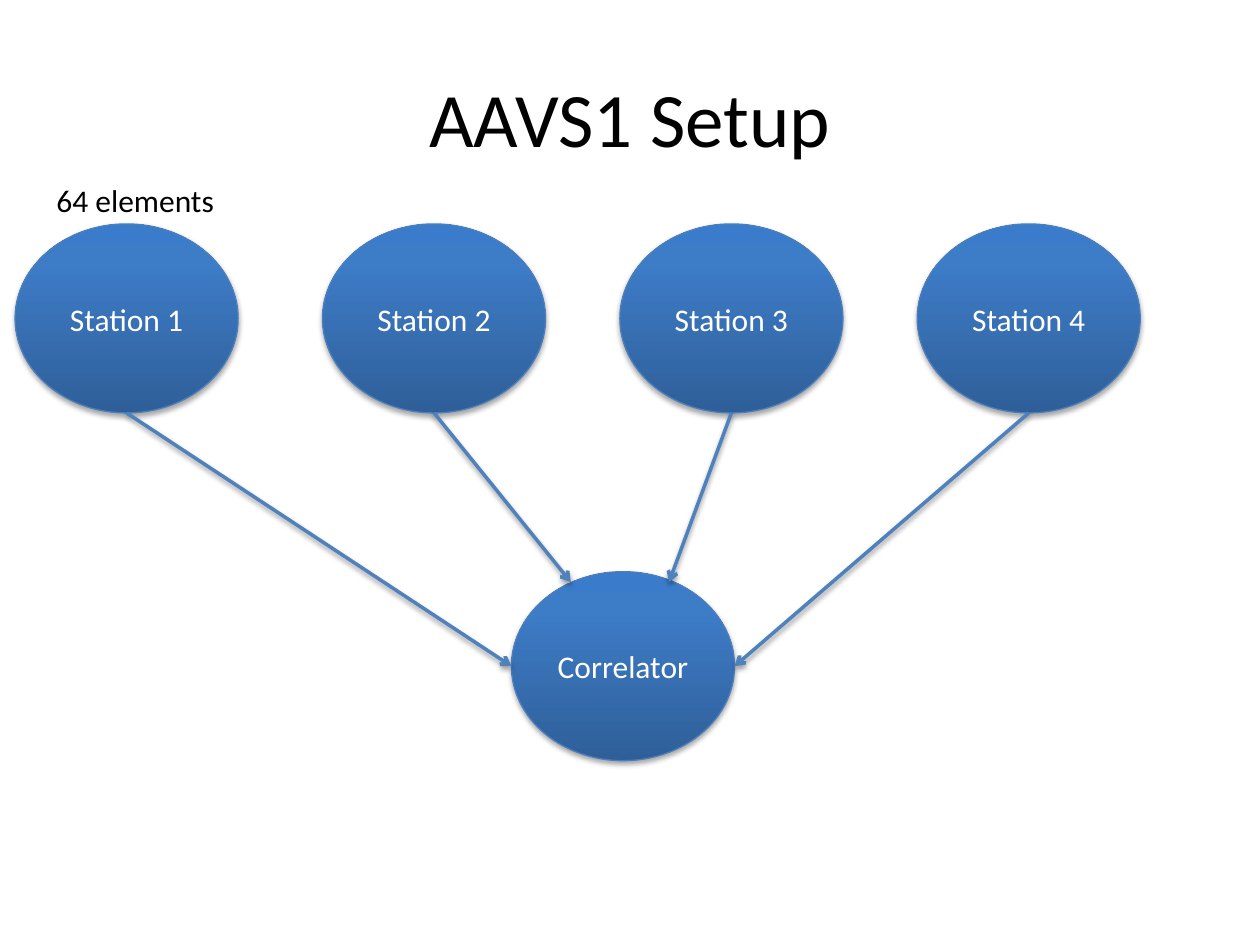
from dataclasses import dataclass

from lxml import etree
from pptx import Presentation
from pptx.dml.color import RGBColor
from pptx.enum.shapes import MSO_CONNECTOR, MSO_SHAPE
from pptx.enum.text import MSO_ANCHOR, MSO_AUTO_SIZE, PP_ALIGN
from pptx.util import Inches, Pt

OVAL = MSO_SHAPE.OVAL
STRAIGHT = MSO_CONNECTOR.STRAIGHT
MIDDLE, TOP = MSO_ANCHOR.MIDDLE, MSO_ANCHOR.TOP
CENTER, LEFT = PP_ALIGN.CENTER, PP_ALIGN.LEFT
FIT = MSO_AUTO_SIZE.SHAPE_TO_FIT_TEXT
NS = "http://schemas.openxmlformats.org/drawingml/2006/main"
WIDE, HIGH = Inches(10), Inches(7.5)


@dataclass(frozen=True)
class Theme:
    """Colours, type sizes and line widths of the slide."""
    font: str = "Calibri"
    ink: str = "000000"
    pale: str = "FFFFFF"
    edge: str = "4B7EBC"
    arrow: str = "4F81BD"
    blend: tuple = ((0, "2F5F99"), (80, "3D7CC7"), (100, "3A7CCB"))
    head: int = 44
    body: int = 18
    thin: float = 0.75
    thick: float = 2


LOOK = Theme()


def across(share):
    """Turn a share of the slide's width into a length."""
    return round(WIDE * share)


def down(share):
    """Turn a share of the slide's height into a length."""
    return round(HIGH * share)


def place(box):
    """Turn a box in shares into left, top, width and height."""
    x, y, w, h = box
    return across(x), down(y), across(w), down(h)


def write(frame, text, size=LOOK.body, color=LOOK.ink, align=CENTER,
          anchor=MIDDLE, wrap=True):
    """Put formatted text into a text frame."""
    frame.word_wrap = wrap
    frame.vertical_anchor = anchor
    para = frame.paragraphs[0]
    para.alignment = align
    run = para.add_run()
    run.text = text
    run.font.name = LOOK.font
    run.font.size = Pt(size)
    run.font.color.rgb = RGBColor.from_string(color)


def stroke(line, color, width):
    """Set the colour and width of a line."""
    line.color.rgb = RGBColor.from_string(color)
    line.width = Pt(width)


def shade(props, gap, alpha):
    """Give shape properties a soft shadow that falls straight down."""
    for old in props.findall(f"{{{NS}}}effectLst"):
        props.remove(old)
    props.append(etree.fromstring(
        f'<a:effectLst xmlns:a="{NS}"><a:outerShdw blurRad="{Pt(3.1)}" '
        f'dist="{Pt(gap)}" dir="5400000" rotWithShape="0">'
        f'<a:srgbClr val="000000"><a:alpha val="{alpha * 1000}"/></a:srgbClr>'
        '</a:outerShdw></a:effectLst>'))


def blend(props):
    """Fill shape properties with the theme's upward gradient."""
    stops = "".join(
        f'<a:gs pos="{pos * 1000}"><a:srgbClr val="{color}"/></a:gs>'
        for pos, color in LOOK.blend)
    props.find(f"{{{NS}}}prstGeom").addnext(etree.fromstring(
        f'<a:gradFill xmlns:a="{NS}" rotWithShape="1"><a:gsLst>{stops}'
        '</a:gsLst><a:lin ang="16200000" scaled="0"/></a:gradFill>'))


def node(slide, text, box):
    """Draw one labelled ellipse in the box."""
    shape = slide.shapes.add_shape(OVAL, *place(box))
    stroke(shape.line, LOOK.edge, LOOK.thin)
    shape.shadow.inherit = False
    props = shape.element.spPr
    blend(props)
    shade(props, 1.8, 35)
    write(shape.text_frame, text, color=LOOK.pale)


def link(slide, start, end):
    """Draw an arrow between two points given in shares."""
    line = slide.shapes.add_connector(
        STRAIGHT, across(start[0]), down(start[1]), across(end[0]), down(end[1]))
    stroke(line.line, LOOK.arrow, LOOK.thick)
    props = line.element.spPr
    etree.SubElement(props.find(f"{{{NS}}}ln"), f"{{{NS}}}tailEnd", type="arrow")
    shade(props, 1.6, 38)


def title(slide, text, box):
    """Move and fill the title placeholder."""
    shape = slide.shapes.title
    shape.left, shape.top, shape.width, shape.height = place(box)
    write(shape.text_frame, text, size=LOOK.head)


def note(slide, text, box):
    """Add a plain caption in the box."""
    frame = slide.shapes.add_textbox(*place(box)).text_frame
    frame.auto_size = FIT
    write(frame, text, align=LEFT, anchor=TOP, wrap=False)


def network(slide, box):
    """Draw the row of stations and the correlator they feed."""
    x, y, w, h = box
    wide, high = 0.177, 0.2
    pitch = (w - wide) / 3
    lefts = [x - 0.008] + [x + pitch * i for i in range(1, 4)]
    hub, low = x + 0.386, y + h - high
    for i, left in enumerate(lefts, 1):
        node(slide, f"Station {i}", (left, y, wide, high))
    note(slide, "64 elements", (x + 0.015, y - 0.052, 0.147, 0.053))
    node(slide, "Correlator", (hub, low, wide, high))
    mid, dip = low + high / 2, low + 0.011
    ends = ((hub, mid), (hub + 0.047, dip),
            (hub + 0.125, dip), (hub + wide, mid))
    for left, end in zip(lefts, ends):
        link(slide, (left + wide / 2, y + high), end)


def main():
    """Build and save the slide."""
    deck = Presentation()
    deck.slide_width, deck.slide_height = WIDE, HIGH
    slide = deck.slides.add_slide(deck.slide_layouts[5])
    title(slide, "AAVS1 Setup", (0.05, 0.04, 0.9, 0.167))
    network(slide, (0.02, 0.237, 0.885, 0.568))
    deck.save("out.pptx")


if __name__ == "__main__":
    main()
